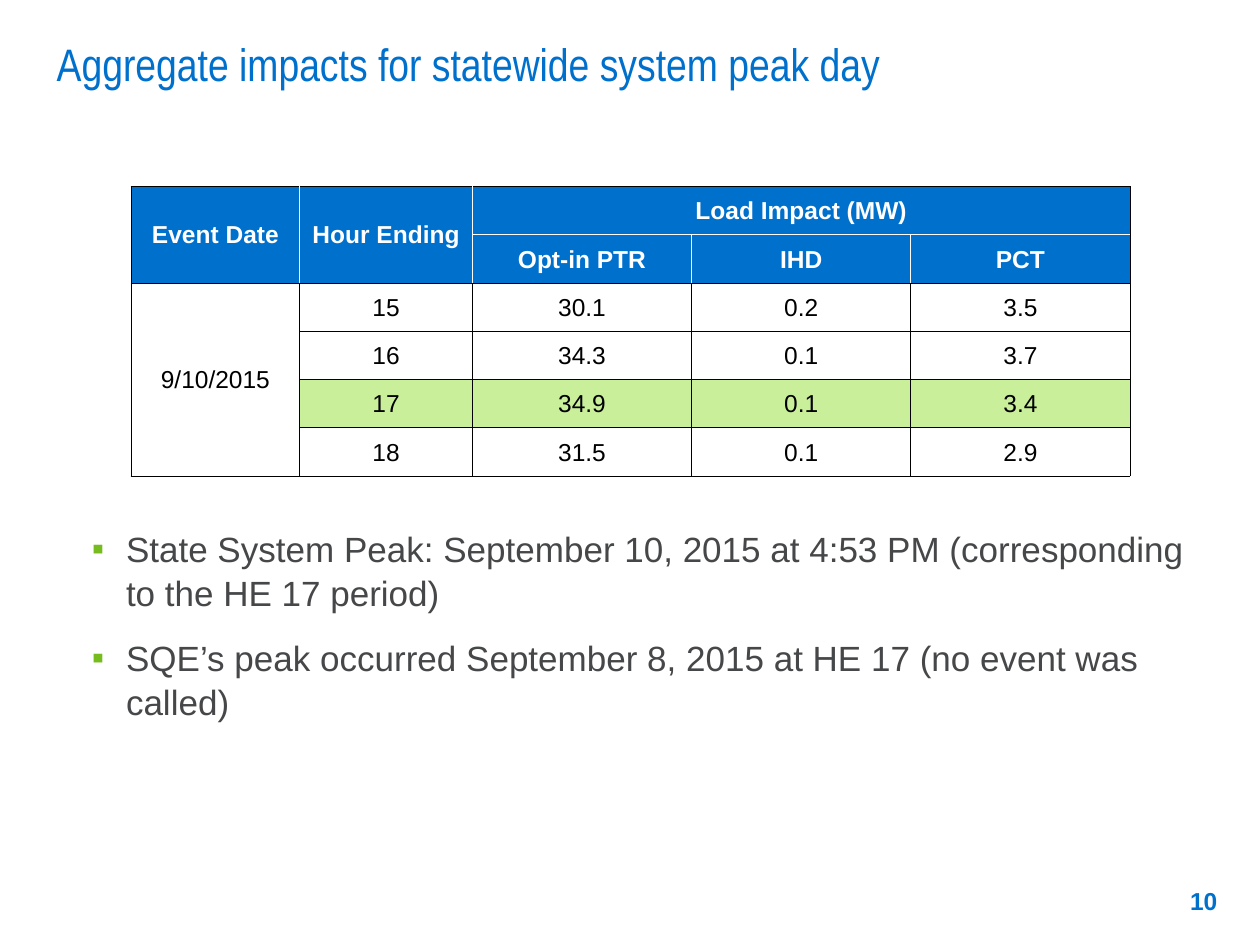
from lxml import etree
from pptx import Presentation
from pptx.dml.color import RGBColor
from pptx.enum.text import MSO_ANCHOR, MSO_AUTO_SIZE, PP_ALIGN
from pptx.oxml.ns import qn
from pptx.util import Inches, Pt

LEFT, CENTER, RIGHT = PP_ALIGN.LEFT, PP_ALIGN.CENTER, PP_ALIGN.RIGHT
MIDDLE, BOTTOM = MSO_ANCHOR.MIDDLE, MSO_ANCHOR.BOTTOM
NO_FIT = MSO_AUTO_SIZE.NONE
COLORS = {"blue": "0070CD", "green": "77BC1F", "highlight": "CAEF9B",
          "gray": "464749", "white": "FFFFFF", "black": "000000"}


def write(p, text, size=14, color="black", bold=False, font="Arial", align=LEFT):
    p.alignment = align
    r = p.add_run()
    r.text = text
    r.font.name, r.font.size, r.font.bold = font, Pt(size), bold
    r.font.color.rgb = RGBColor.from_string(COLORS[color])


def set_border(cell, side, color):
    tcPr = cell._tc.get_or_add_tcPr()
    ln = etree.SubElement(tcPr, qn(f"a:ln{side}"), w=str(Pt(0.5)))
    fill = etree.SubElement(ln, qn("a:solidFill"))
    etree.SubElement(fill, qn("a:srgbClr"), val=COLORS[color])


prs = Presentation()
prs.slide_width, prs.slide_height = Inches(10), Inches(7.5)
s = prs.slides.add_slide(prs.slide_layouts[1])

# Title
title = s.shapes.title
title.left, title.top = Inches(0.45), Inches(0.03)
title.width, title.height = Inches(9.01), Inches(0.74)
tf = title.text_frame
tf.auto_size, tf.vertical_anchor, tf.margin_left = NO_FIT, BOTTOM, 0
write(tf.paragraphs[0], "Aggregate impacts for statewide system peak day",
      size=26, color="blue", font="Arial Narrow")

# Load impact table
rows = [
    ["Event Date", "Hour Ending", "Load Impact (MW)", "", ""],
    ["", "", "Opt-in PTR", "IHD", "PCT"],
    ["9/10/2015", "15", "30.1", "0.2", "3.5"],
    ["", "16", "34.3", "0.1", "3.7"],
    ["", "17", "34.9", "0.1", "3.4"],
    ["", "18", "31.5", "0.1", "2.9"],
]
HEADER_ROWS, PEAK_ROW, FIRST_IMPACT, LAST = 2, 4, 2, 4
table = s.shapes.add_table(len(rows), 5, Inches(1.04), Inches(1.48),
                           Inches(7.92), Inches(2.3)).table
table.first_row = table.horz_banding = False
for col, width in zip(table.columns, [1.34, 1.37, 1.74, 1.74, 1.74]):
    col.width = Inches(width)

for i, row in enumerate(rows):
    for j, text in enumerate(row):
        cell = table.cell(i, j)
        header = i < HEADER_ROWS
        group_head = i == 0 and j >= FIRST_IMPACT
        cell.vertical_anchor = MIDDLE
        cell.margin_left = cell.margin_right = cell.margin_top = Inches(0.01)
        cell.margin_bottom = 0
        # Lines inside the header are white, all others black
        white_sides = {"L": header and j > 0,
                       "R": header and j < LAST and not group_head,
                       "T": i == 1, "B": group_head}
        for side, white in white_sides.items():
            set_border(cell, side, "white" if white else "black")
        if header or (i == PEAK_ROW and j > 0):
            cell.fill.solid()
            cell.fill.fore_color.rgb = RGBColor.from_string(
                COLORS["blue" if header else "highlight"])
        else:
            cell.fill.background()
        write(cell.text_frame.paragraphs[0], text, bold=header, align=CENTER,
              color="white" if header else "black")

for top, left, bottom, right in [(0, 0, 1, 0), (0, 1, 1, 1), (0, 2, 0, 4), (2, 0, 5, 0)]:
    table.cell(top, left).merge(table.cell(bottom, right))

# Bullets
body = s.placeholders[1]
body.left, body.top = Inches(0.63), Inches(4.12)
body.width, body.height = Inches(9.01), Inches(2.84)
tf = body.text_frame
tf.auto_size = NO_FIT
bullets = [
    "State System Peak: September 10, 2015 at 4:53 PM (corresponding to the HE 17 period)",
    "SQE’s peak occurred September 8, 2015 at HE 17 (no event was called)",
]
for i, text in enumerate(bullets):
    p = tf.add_paragraph() if i else tf.paragraphs[0]
    p.line_spacing, p.space_before, p.space_after = 1.05, Pt(0), Pt(12)
    pPr = p._p.get_or_add_pPr()
    pPr.set("marL", str(Inches(0.27)))
    pPr.set("indent", str(Inches(-0.27)))
    bu_color = etree.SubElement(pPr, qn("a:buClr"))
    etree.SubElement(bu_color, qn("a:srgbClr"), val=COLORS["green"])
    etree.SubElement(pPr, qn("a:buFont"), typeface="Arial")
    etree.SubElement(pPr, qn("a:buChar"), char="▪")
    write(p, text, size=20, color="gray")

# Page number
sp = s.shapes.add_textbox(Inches(9.06), Inches(6.95), Inches(0.7), Inches(0.4))
tf = sp.text_frame
tf.word_wrap, tf.vertical_anchor = True, MIDDLE
write(tf.paragraphs[0], "10", color="blue", bold=True, align=RIGHT)

prs.save("out.pptx")
